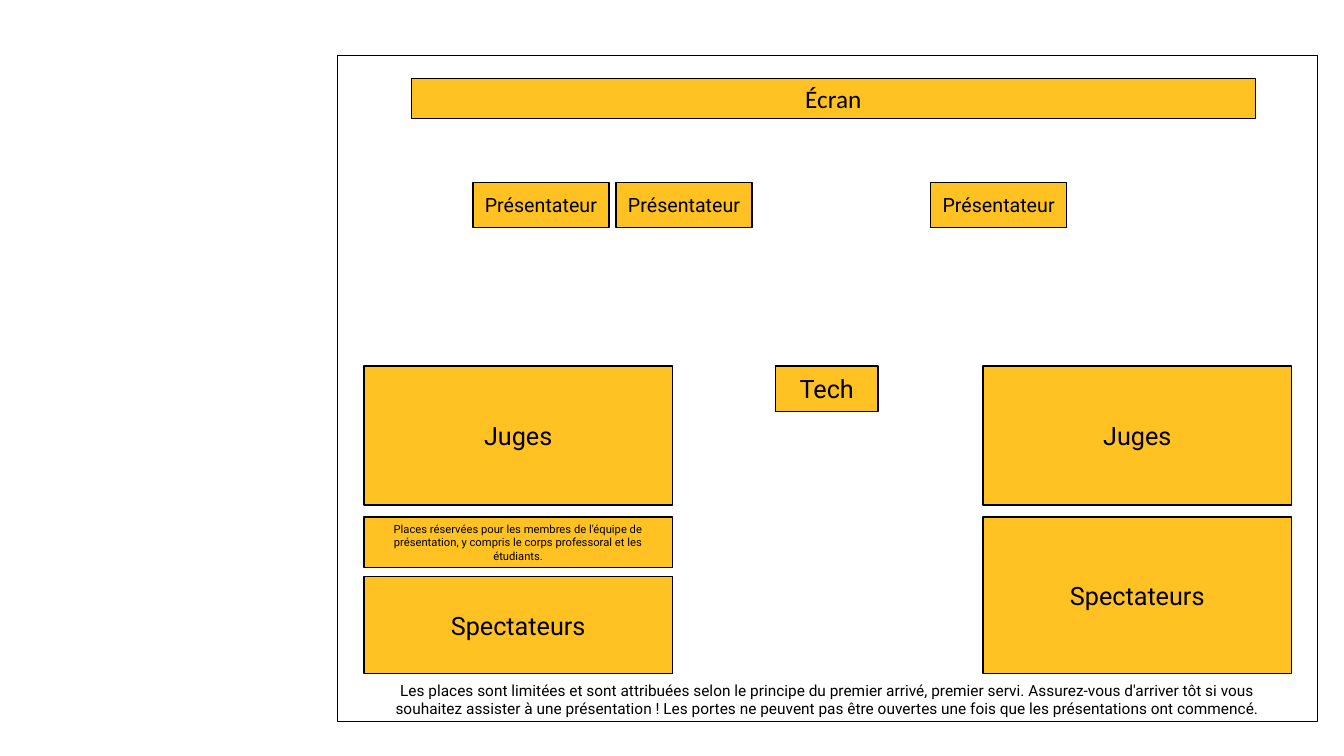
from pptx import Presentation
from pptx.dml.color import RGBColor
from pptx.enum.shapes import MSO_SHAPE
from pptx.enum.text import MSO_ANCHOR, PP_ALIGN
from pptx.util import Pt

PX = 9144
SLIDE = (1333, 750)
ROOM = (335, 55, 972, 661)

THEME = {
    "gold": RGBColor.from_string("FFC222"),
    "ink": RGBColor.from_string("000000"),
    "font": "Roboto",
    "screen_font": "Calibri",
    "large": 18,
    "medium": 14,
    "notice": 11,
    "small": 8,
    "line": 1,
    "thin": 0.75,
}

SCREEN = ("Écran", (408, 78, 837, 40))
PRESENTER = "Présentateur"
PRESENTER_LEFTS = (469, 611, 923)
TECH = ("Tech", (769, 363, 102, 45))
SEATING = [
    (361, [
        ("Juges", 363, 138, "large"),
        ("Places réservées pour les membres de l'équipe de présentation, "
         "y compris le corps professoral et les étudiants.", 513, 50, "small"),
        ("Spectateurs", 572, 96, "large"),
    ]),
    (975, [
        ("Juges", 363, 138, "large"),
        ("Spectateurs", 513, 155, "large"),
    ]),
]
SEATING_WIDTH = 306
NOTICE = (
    "Les places sont limitées et sont attribuées selon le principe du premier arrivé, "
    "premier servi. Assurez-vous d'arriver tôt si vous souhaitez assister à une "
    "présentation ! Les portes ne peuvent pas être ouvertes une fois que les "
    "présentations ont commencé.",
    (361, 673, 920, 42),
)


def emu(box):
    return [v * PX for v in box]


def write(sp, text, size, font="font"):
    tf = sp.text_frame
    tf.word_wrap = True
    tf.vertical_anchor = MSO_ANCHOR.MIDDLE
    p = tf.paragraphs[0]
    p.alignment = PP_ALIGN.CENTER
    r = p.add_run()
    r.text = text
    for name, value in {"name": THEME[font], "size": Pt(THEME[size])}.items():
        setattr(r.font, name, value)
    r.font.color.rgb = THEME["ink"]


def add_rect(s, box, line="line"):
    sp = s.shapes.add_shape(MSO_SHAPE.RECTANGLE, *emu(box))
    sp.shadow.inherit = False
    sp.fill.background()
    sp.line.color.rgb = THEME["ink"]
    sp.line.width = Pt(THEME[line])
    return sp


def add_block(s, text, box, size="large", font="font", line="line"):
    sp = add_rect(s, box, line)
    sp.fill.solid()
    sp.fill.fore_color.rgb = THEME["gold"]
    write(sp, text, size, font)


def main():
    prs = Presentation()
    prs.slide_width, prs.slide_height = emu(SLIDE)
    s = prs.slides.add_slide(prs.slide_layouts[6])

    add_rect(s, ROOM)
    add_block(s, *SCREEN, font="screen_font", line="thin")
    for left in PRESENTER_LEFTS:
        add_block(s, PRESENTER, (left, 181, 135, 45), "medium")
    add_block(s, *TECH)
    for left, blocks in SEATING:
        for text, top, height, size in blocks:
            add_block(s, text, (left, top, SEATING_WIDTH, height), size)

    text, box = NOTICE
    write(s.shapes.add_textbox(*emu(box)), text, "notice")
    prs.save("out.pptx")


if __name__ == "__main__":
    main()
